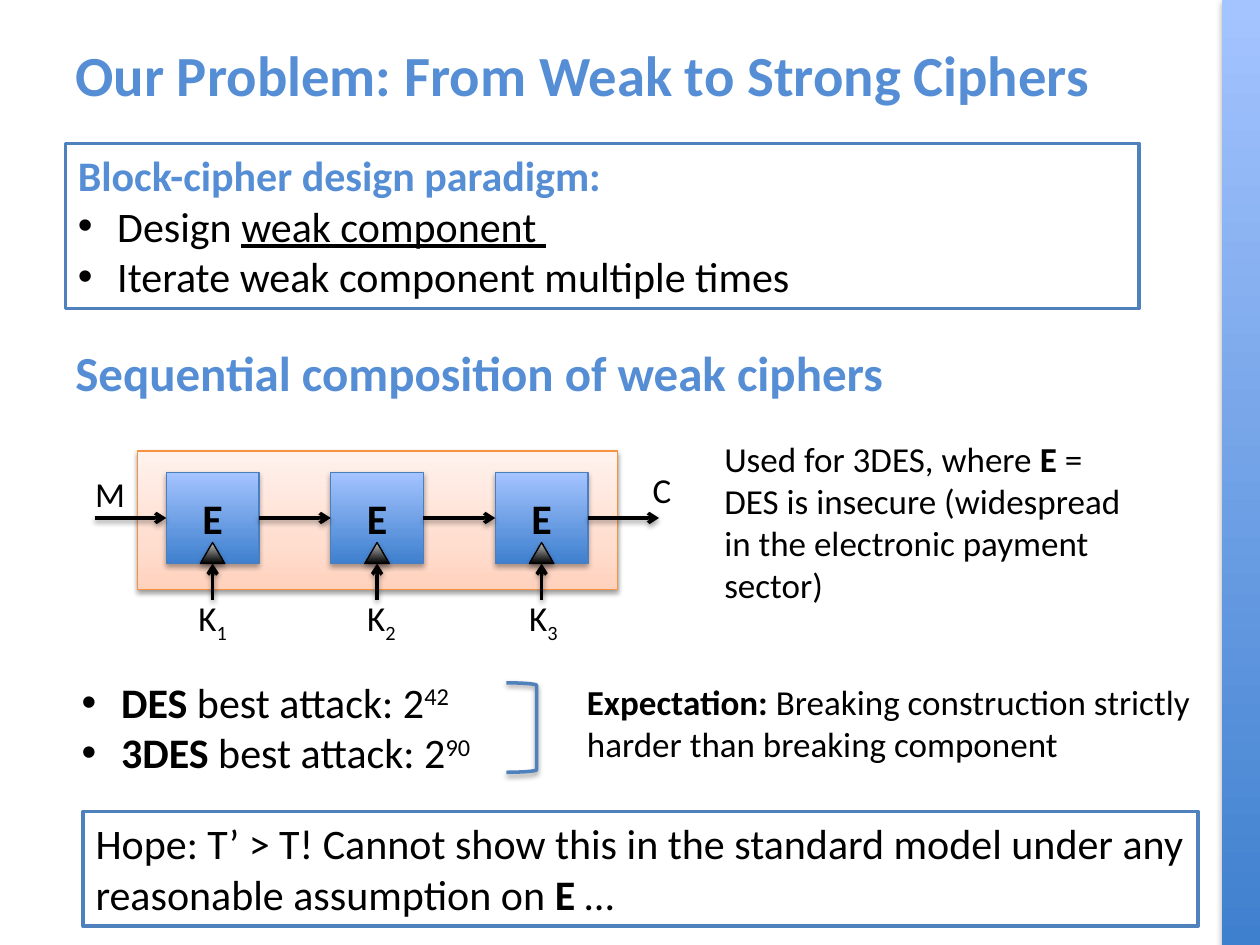
import pptx
import pptx.dml.color
import pptx.enum.shapes
import pptx.enum.text
import pptx.oxml
import pptx.oxml.ns
import pptx.util

Pt = pptx.util.Pt
SHAPE = pptx.enum.shapes.MSO_SHAPE
ALIGN = pptx.enum.text.PP_ALIGN
ANCHOR = pptx.enum.text.MSO_ANCHOR
TOP, LEFT, BOTTOM, RIGHT = range(4)

FONT = "Calibri"
HEADING, OUTLINE, BLACK, WHITE = "558ED5", "4F81BD", "000000", "FFFFFF"
BLUE_FADE = [(0, "3F80CE"), (100, "A4C4FF")]
PEACH_FADE = [(0, "FFD2BD"), (35, "FFDED0"), (100, "FFF2ED")]
GREY_FADE = [(0, "000000"), (100, "BDBDBD")]
STRONG_SHADOW, SOFT_SHADOW = (35, 1.8), (38, 1.6)


def color(value):
    return pptx.dml.color.RGBColor.from_string(value)


def element(xml):
    """Parse one DrawingML element written with the a: prefix."""
    name, rest = xml[:-2].partition(" ")[::2]
    return pptx.oxml.parse_xml(f"{name} {pptx.oxml.ns.nsdecls('a')} {rest}/>")


def add_shadow(effects, opacity, distance):
    shadow = element(f'<a:outerShdw blurRad="{Pt(3.1)}" dist="{Pt(distance)}" '
                     'dir="5400000" rotWithShape="0"/>')
    tint = element(f'<a:srgbClr val="{BLACK}"/>')
    tint.append(element(f'<a:alpha val="{opacity * 1000}"/>'))
    shadow.append(tint)
    effects.append(shadow)


def fade(shape, stops):
    """Fill with a gradient whose first stop is at the bottom."""
    shape.fill.gradient()
    shape.fill.gradient_angle = 90
    stop_list = shape._element.spPr.find(".//" + pptx.oxml.ns.qn("a:gsLst"))
    for old in list(stop_list):
        stop_list.remove(old)
    for position, value in stops:
        stop = element(f'<a:gs pos="{position * 1000}"/>')
        stop.append(element(f'<a:srgbClr val="{value}"/>'))
        stop_list.append(stop)


def add_shape(page, kind, bounds, fill=None, line=None, weight=0.75, shadow=None):
    """Add a preset shape; fill is a hex string, a list of stops or None."""
    shape = page.shapes.add_shape(kind, *map(Pt, bounds))
    if isinstance(fill, list):
        fade(shape, fill)
    elif fill:
        shape.fill.solid()
        shape.fill.fore_color.rgb = color(fill)
    else:
        shape.fill.background()
    if line:
        shape.line.color.rgb = color(line)
        shape.line.width = Pt(weight)
    else:
        shape.line.fill.background()
    shape.shadow.inherit = False
    if shadow:
        effects = shape._element.spPr.find(pptx.oxml.ns.qn("a:effectLst"))
        add_shadow(effects, *shadow)
    return shape


def set_bullet(para):
    properties = para._p.get_or_add_pPr()
    properties.set("marL", str(Pt(22.5)))
    properties.set("indent", str(-Pt(22.5)))
    properties.append(element('<a:buFont typeface="Arial"/>'))
    properties.append(element('<a:buChar char="•"/>'))


def add_span(para, text, size, style="", value=BLACK):
    """Style holds any of: b (bold), u (underline), ^ (superscript), _ (subscript)."""
    span = para.add_run()
    span.text = text
    font = span.font
    font.name, font.size, font.color.rgb = FONT, Pt(size), color(value)
    font.bold = "b" in style
    font.underline = "u" in style
    for mark, baseline in (("^", 30000), ("_", -25000)):
        if mark in style:
            span._r.get_or_add_rPr().set("baseline", str(baseline))


def write(box, size, paras, align=ALIGN.LEFT, anchor=ANCHOR.TOP, wrap=True):
    """Each para is a list of span tuples; a leading "•" makes it a bullet."""
    frame = box.text_frame
    frame.word_wrap = wrap
    frame.vertical_anchor = anchor
    for index, spans in enumerate(paras):
        para = frame.paragraphs[0] if index == 0 else frame.add_paragraph()
        para.alignment = align
        if spans[0] == "•":
            set_bullet(para)
            spans = spans[1:]
        for span in spans:
            add_span(para, span[0], size, *span[1:])


def add_text(page, bounds, size, paras, **options):
    write(page.shapes.add_textbox(*map(Pt, bounds)), size, paras, **options)


def add_label(page, left, top, *spans):
    add_text(page, (left, top, 36, 31.5), 20, [spans], align=ALIGN.CENTER, wrap=False)


def add_arrow(page, start, end, source=None, target=None):
    """Draw an arrow; source and target are (shape, side) pairs to join."""
    arrow = page.shapes.add_connector(
        pptx.enum.shapes.MSO_CONNECTOR.STRAIGHT, *map(Pt, start + end))
    arrow.line.color.rgb = color(BLACK)
    arrow.line.width = Pt(2)
    arrow.line._get_or_add_ln().append(element('<a:tailEnd type="arrow"/>'))
    effects = element("<a:effectLst />")
    add_shadow(effects, *SOFT_SHADOW)
    arrow._element.spPr.append(effects)
    if source:
        arrow.begin_connect(*source)
    if target:
        arrow.end_connect(*target)


def add_cipher_chain(page):
    add_shape(page, SHAPE.RECTANGLE, (78.5, 257.8, 274.3, 79.2), PEACH_FADE,
              "F69240", shadow=SOFT_SHADOW)
    left, top, width, height, pitch = 95, 270, 53, 52, 94
    middle, bottom = top + height / 2, top + height
    blocks = []
    for index in range(3):
        block = add_shape(page, SHAPE.RECTANGLE, (left + index * pitch, top, width, height),
                          BLUE_FADE, "4B7EBC", shadow=STRONG_SHADOW)
        write(block, 24, [[("E", "b")]], align=ALIGN.CENTER, anchor=ANCHOR.MIDDLE)
        blocks.append(block)

    add_arrow(page, (54, middle), (left, middle), target=(blocks[0], LEFT))
    for index, (before, after) in enumerate(zip(blocks, blocks[1:])):
        start = left + index * pitch + width
        add_arrow(page, (start, middle), (start + pitch - width, middle),
                  (before, RIGHT), (after, LEFT))
    end = left + 2 * pitch + width
    add_arrow(page, (end, middle), (376.6, middle), source=(blocks[-1], RIGHT))

    label_shifts = (0, 2.5, 1)
    for index, (block, shift) in enumerate(zip(blocks, label_shifts)):
        center = left + index * pitch + width / 2
        add_arrow(page, (center, 342.7), (center, bottom), target=(block, BOTTOM))
        add_label(page, center - 18 + shift, 337.5, ("K",), (str(index + 1), "_"))
        add_shape(page, SHAPE.ISOSCELES_TRIANGLE, (center - 7, bottom - 12, 14, 12),
                  GREY_FADE, BLACK, shadow=STRONG_SHADOW)
    add_label(page, 45, 266.5, ("M",))
    add_label(page, 360.3, 264.3, ("C",))


def main():
    deck = pptx.Presentation()
    deck.slide_width, deck.slide_height = Pt(720), Pt(540)
    page = deck.slides.add_slide(deck.slide_layouts[6])

    add_shape(page, SHAPE.RECTANGLE, (698.4, 0, 21.6, 540), BLUE_FADE, shadow=STRONG_SHADOW)
    add_text(page, (36, 12.2, 650.9, 59.8), 32.4,
             [[("Our Problem: From Weak to Strong Ciphers", "b", HEADING)]],
             anchor=ANCHOR.MIDDLE)

    paradigm = add_shape(page, SHAPE.RECTANGLE, (37.4, 82, 613.5, 94.3), WHITE, OUTLINE, 2)
    write(paradigm, 24, [
        [("Block-cipher design paradigm:", "b", HEADING)],
        ["•", ("Design ",), ("weak component ", "u")],
        ["•", ("Iterate weak component multiple times",)],
    ])

    add_text(page, (36, 192.2, 619.2, 41), 28,
             [[("Sequential composition of weak ciphers", "b", HEADING)]])
    add_text(page, (406.8, 246.2, 244, 104.4), 20, [[
        ("Used for 3DES, where ",), ("E", "b"),
        (" = DES is insecure (widespread in the electronic payment sector)",)]])
    add_cipher_chain(page)

    attacks = (("DES", "42"), ("3DES", "90"))
    add_text(page, (39.6, 383, 548, 65.5), 24, [
        ["•", (cipher, "b"), (" best attack: 2",), (exponent, "^")]
        for cipher, exponent in attacks])
    add_shape(page, SHAPE.RIGHT_BRACKET, (289.4, 390.2, 17.3, 51.1),
              line=OUTLINE, weight=2, shadow=SOFT_SHADOW)
    add_text(page, (328.3, 385.2, 366.5, 55.4), 20, [[
        ("Expectation:", "b"),
        (" Breaking construction strictly harder than breaking component",)]])

    hope = add_shape(page, SHAPE.RECTANGLE, (47.5, 463.7, 637.2, 65.5), WHITE, OUTLINE, 2)
    write(hope, 24, [[
        ("Hope: T’ > T! Cannot show this in the standard model under any "
         "reasonable assumption on ",),
        ("E ", "b"), ("…",)]])

    deck.save("out.pptx")


if __name__ == "__main__":
    main()
